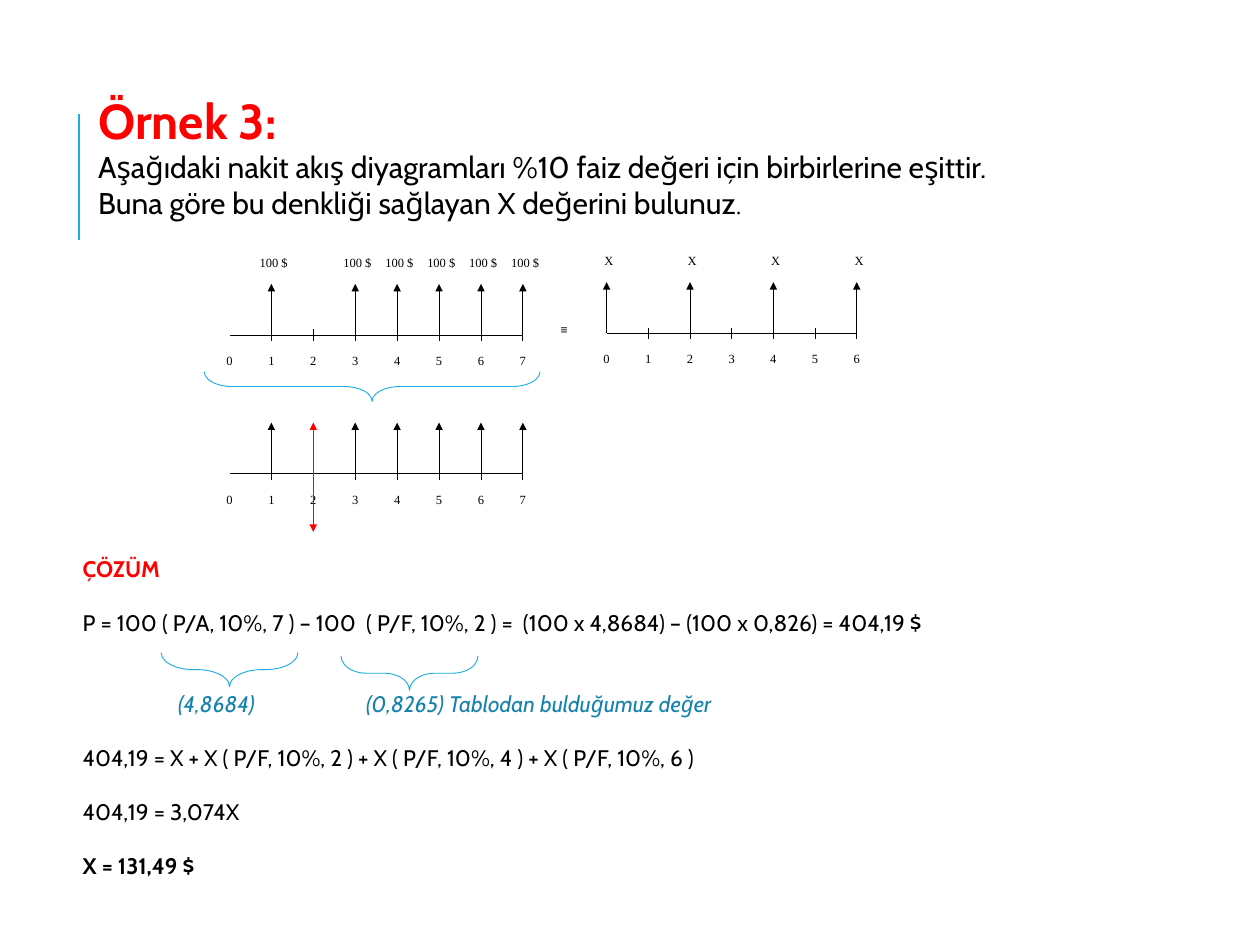
import pptx
import pptx.util
import pptx.dml.color
import pptx.enum.shapes
import pptx.enum.text
import pptx.oxml
import pptx.oxml.ns

COLUMNS, ROWS = 140, 105
CELL = pptx.util.Inches(0.1)
COLORS = {"text": "000000", "red": "FF0000", "accent": "1CADE4", "note": "1482AC"}
LINE_HEIGHT = 21.6


def cells(count):
    return round(count * CELL)


def color(name):
    return pptx.dml.color.RGBColor.from_string(COLORS[name])


def set_font(font, size, name="Cabin", ink="text", bold=False, italic=False):
    font.size = pptx.util.Pt(size)
    font.name = name
    font.bold = bold
    font.italic = italic
    font.color.rgb = color(ink)


def add_child(parent, tag, **attributes):
    child = pptx.oxml.parse_xml(f"<{tag} {pptx.oxml.ns.nsdecls('a')}/>")
    for key, value in attributes.items():
        child.set(key, str(value))
    parent.append(child)
    return child


def add_line(slide, start, end, ink="text", width=0.75, arrow=False):
    connector = slide.shapes.add_connector(
        pptx.enum.shapes.MSO_CONNECTOR.STRAIGHT, *map(cells, start + end))
    connector.line.color.rgb = color(ink)
    connector.line.width = pptx.util.Pt(width)
    if arrow:
        add_child(connector.line._get_or_add_ln(), "a:tailEnd", type="triangle")
    add_child(connector._element.spPr, "a:effectLst")


def add_label(slide, center, top, text, bold=False):
    width, height = 6, 2.7
    shape = slide.shapes.add_textbox(
        *map(cells, (center - width / 2, top, width, height)))
    shape.text_frame.word_wrap = True
    paragraph = shape.text_frame.paragraphs[0]
    paragraph.text = text
    paragraph.alignment = pptx.enum.text.PP_ALIGN.CENTER
    set_font(paragraph.font, 10, "Times New Roman", bold=bold)


def add_brace(slide, box, curve):
    left, top, width, height = box
    shape = slide.shapes.add_shape(
        pptx.enum.shapes.MSO_SHAPE.LEFT_BRACE,
        *map(cells, (left + (width - height) / 2, top + (height - width) / 2, height, width)))
    shape.rotation = 270
    shape.adjustments[0] = curve
    shape.shadow.inherit = False
    shape.fill.background()
    shape.line.color.rgb = color("accent")
    shape.line.width = pptx.util.Pt(0.75)


def add_timeline(slide, box, periods, flows, value=None, cancelled=None):
    left, top, width, height = box
    step = width / periods
    axis, tip, tick = top + 0.63 * height, top + 0.25 * height, 0.043 * height
    add_line(slide, (left, axis), (left + width, axis))
    for period in range(periods + 1):
        x = left + period * step
        add_label(slide, x, top + 0.73 * height, str(period))
        if period:
            add_line(slide, (x, axis - tick), (x, axis + tick))
        if period in flows:
            add_line(slide, (x, axis), (x, tip), arrow=True)
            if value:
                add_label(slide, x + 0.25, top, value)
        if period == cancelled:
            for end in (tip, top + 1.06 * height):
                add_line(slide, (x, axis), (x, end), "red", arrow=True)


def add_heading(slide, box):
    left, top, width, height = box
    add_line(slide, (left - 1.1, top + 3.2), (left - 1.1, top + 17.2), "accent", 1.5)
    title = slide.shapes.title
    title.left, title.top, title.width, title.height = map(cells, box)
    frame = title.text_frame
    frame.auto_size = pptx.enum.text.MSO_AUTO_SIZE.NONE
    frame.vertical_anchor = pptx.enum.text.MSO_ANCHOR.TOP
    frame.text = "\n".join((
        "Örnek 3:",
        "Aşağıdaki nakit akış diyagramları %10 faiz değeri için birbirlerine eşittir.",
        "Buna göre bu denkliği sağlayan X değerini bulunuz"))
    for index, paragraph in enumerate(frame.paragraphs):
        paragraph.alignment = pptx.enum.text.PP_ALIGN.LEFT
        paragraph.space_before = pptx.util.Pt(0)
        if index == 0:
            set_font(paragraph.font, 39.2, ink="red", bold=True)
        else:
            set_font(paragraph.font, 24)
    stop = frame.paragraphs[-1].add_run()
    stop.text = "."
    set_font(stop.font, 18, "Times New Roman")


def add_diagrams(slide, box):
    left, top, width, height = box
    flows = (1, 3, 4, 5, 6, 7)
    add_timeline(slide, (left, top, 32.6, height), 7, flows, "100 $")
    add_timeline(slide, (left + 41.9, top - 0.2, 27.8, height), 6, (0, 2, 4, 6), "X")
    add_timeline(slide, (left, top + 15.4, 32.6, height), 7, flows, cancelled=2)
    add_label(slide, left + 37.2, top + 0.5 * height, "≡", bold=True)
    add_brace(slide, (left - 2.8, top + 13.5, 37.3, 3.3), 0.94)


def add_solution(slide, box):
    left, top, width, height = box
    lines = (
        ("ÇÖZÜM", 0, {"ink": "red", "bold": True}),
        ("P = 100 ( P/A, 10%, 7 ) – 100  ( P/F, 10%, 2 ) =  (100 x 4,8684) – (100 x 0,826) = 404,19 $", 1, {}),
        ("\t(4,8684)\t(0,8265) Tablodan bulduğumuz değer", 2, {"ink": "note", "italic": True}),
        ("404,19 = X + X ( P/F, 10%, 2 ) + X ( P/F, 10%, 4 ) + X ( P/F, 10%, 6 )", 1, {}),
        ("404,19 = 3,074X", 1, {}),
        ("X = 131,49 $", 1, {"bold": True}),
    )
    shape = slide.shapes.add_textbox(*map(cells, box))
    frame = shape.text_frame
    frame.word_wrap = True
    frame.text = "\n".join(text for text, gap, style in lines)
    for paragraph, (text, gap, style) in zip(frame.paragraphs, lines):
        paragraph.line_spacing = pptx.util.Pt(LINE_HEIGHT)
        paragraph.space_before = pptx.util.Pt(gap * LINE_HEIGHT)
        set_font(paragraph.font, 18, **style)
        if "\t" in text:
            properties = paragraph._p.get_or_add_pPr()
            tabs = pptx.oxml.parse_xml(f"<a:tabLst {pptx.oxml.ns.nsdecls('a')}/>")
            for position in (10.6, 31.5):
                add_child(tabs, "a:tab", pos=cells(position), algn="l")
            properties.find(pptx.oxml.ns.qn("a:defRPr")).addprevious(tabs)
    add_brace(slide, (left + 9.7, top + 11.3, 15.2, 3.8), 0.94)
    add_brace(slide, (left + 29.7, top + 11.7, 15.2, 3.8), 0.74)


def main():
    presentation = pptx.Presentation()
    presentation.slide_width = cells(COLUMNS)
    presentation.slide_height = cells(ROWS)
    slide = presentation.slides.add_slide(presentation.slide_layouts.get_by_name("Title Only"))
    add_heading(slide, (9.9, 9.5, 119.5, 18.7))
    add_diagrams(slide, (25.5, 27.8, 69.7, 15))
    add_solution(slide, (8.2, 61.2, 103.6, 40.4))
    presentation.save("out.pptx")


if __name__ == "__main__":
    main()
